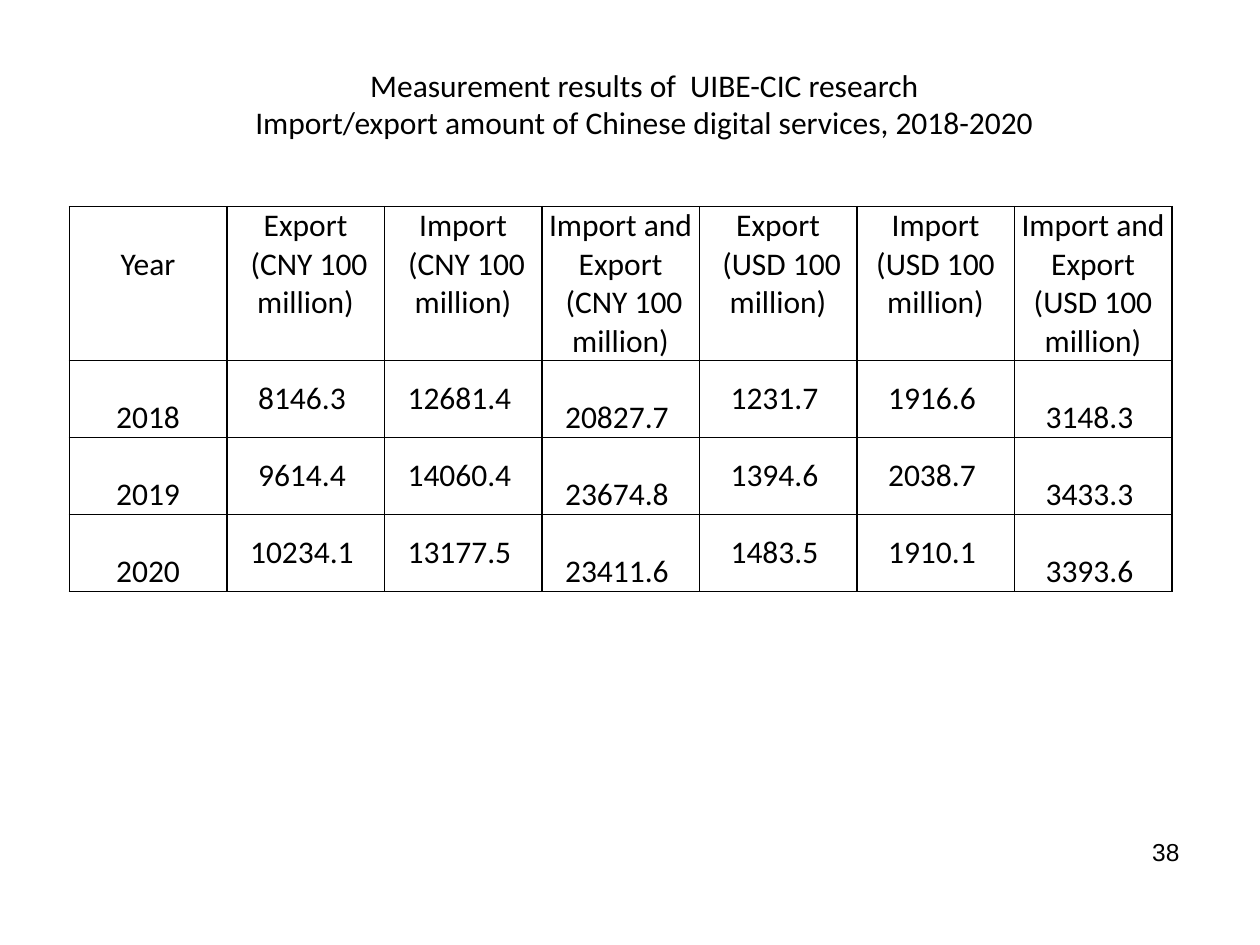
from lxml.etree import SubElement
from pptx import Presentation
from pptx.dml.color import RGBColor
from pptx.enum.text import MSO_ANCHOR as Anchor, MSO_AUTO_SIZE as AutoSize, PP_ALIGN as Align
from pptx.oxml.ns import qn
from pptx.util import Inches, Pt

# Content
TITLE = [
    "Measurement results of  UIBE-CIC research",
    "Import/export amount of Chinese digital services, 2018-2020",
]
HEADERS = [
    "Year",
    "Export\n (CNY 100 million)",
    "Import\n (CNY 100 million)",
    "Import and Export\n (CNY 100 million)",
    "Export\n (USD 100 million)",
    "Import\n(USD 100 million)",
    "Import and Export\n(USD 100 million)",
]
AMOUNTS = {
    "2018": (8146.3, 12681.4, 20827.7, 1231.7, 1916.6, 3148.3),
    "2019": (9614.4, 14060.4, 23674.8, 1394.6, 2038.7, 3433.3),
    "2020": (10234.1, 13177.5, 23411.6, 1483.5, 1910.1, 3393.6),
}
PAGE_NUMBER = "38"

# Style and grid
BLACK = RGBColor(0, 0, 0)
TABLE_LEFT, TABLE_TOP = 0.55, 1.64
COLUMN_WIDTH, HEADER_HEIGHT, ROW_HEIGHT = 1.25, 1.2, 0.52
TOTAL_COLUMNS = (3, 6)


def format_text(text_frame, alignment, font_name="Calibri", size=18):
    for paragraph in text_frame.paragraphs:
        paragraph.alignment = alignment
        for run in paragraph.runs:
            run.font.name = font_name
            run.font.size = Pt(size)
            run.font.color.rgb = BLACK


def add_borders(cell):
    properties = cell._tc.get_or_add_tcPr()
    for side in ("a:lnL", "a:lnR", "a:lnT", "a:lnB"):
        line = SubElement(properties, qn(side), w=str(Pt(1)))
        fill = SubElement(line, qn("a:solidFill"))
        SubElement(fill, qn("a:srgbClr"), val=str(BLACK))


def fill_cell(cell, text, anchor, line_spacing):
    cell.text = text
    cell.vertical_anchor = anchor
    cell.margin_left = cell.margin_right = Inches(0.05)
    cell.margin_top = cell.margin_bottom = 0
    format_text(cell.text_frame, Align.CENTER)
    for paragraph in cell.text_frame.paragraphs:
        paragraph.line_spacing = line_spacing
    add_borders(cell)
    cell.fill.background()


presentation = Presentation()
presentation.slide_width, presentation.slide_height = Inches(10), Inches(7.5)
slide = presentation.slides.add_slide(presentation.slide_layouts[5])

# Title
title = slide.shapes.title
title.left, title.top, title.width, title.height = map(Inches, (1.77, 0.47, 6.69, 0.88))
title.text_frame.text = "\n".join(TITLE)
title.text_frame.auto_size = AutoSize.NONE
title.text_frame.vertical_anchor = Anchor.TOP
format_text(title.text_frame, Align.CENTER)

# Table of amounts
rows = [HEADERS] + [
    [year] + [f"{amount:.1f} " for amount in amounts] for year, amounts in AMOUNTS.items()
]
heights = [HEADER_HEIGHT] + [ROW_HEIGHT] * len(AMOUNTS)
table = slide.shapes.add_table(
    len(rows), len(HEADERS), Inches(TABLE_LEFT), Inches(TABLE_TOP),
    Inches(COLUMN_WIDTH * len(HEADERS)), Inches(sum(heights)),
).table
table.first_row = table.horz_banding = False
for column in table.columns:
    column.width = Inches(COLUMN_WIDTH)
for row_index, row in enumerate(rows):
    table.rows[row_index].height = Inches(heights[row_index])
    for column_index, text in enumerate(row):
        if row_index == 0 or column_index == 0:
            anchor = Anchor.TOP
        else:
            anchor = Anchor.BOTTOM if column_index in TOTAL_COLUMNS else Anchor.MIDDLE
        line_spacing = 2.0 if column_index == 0 else 1.0
        fill_cell(table.cell(row_index, column_index), text, anchor, line_spacing)

# Page number
number_box = slide.shapes.add_textbox(Inches(7.13), Inches(6.59), Inches(2.33), Inches(0.52))
number_box.text_frame.word_wrap = True
number_box.text_frame.text = PAGE_NUMBER
format_text(number_box.text_frame, Align.RIGHT, "Arial", 14)

presentation.save("out.pptx")
